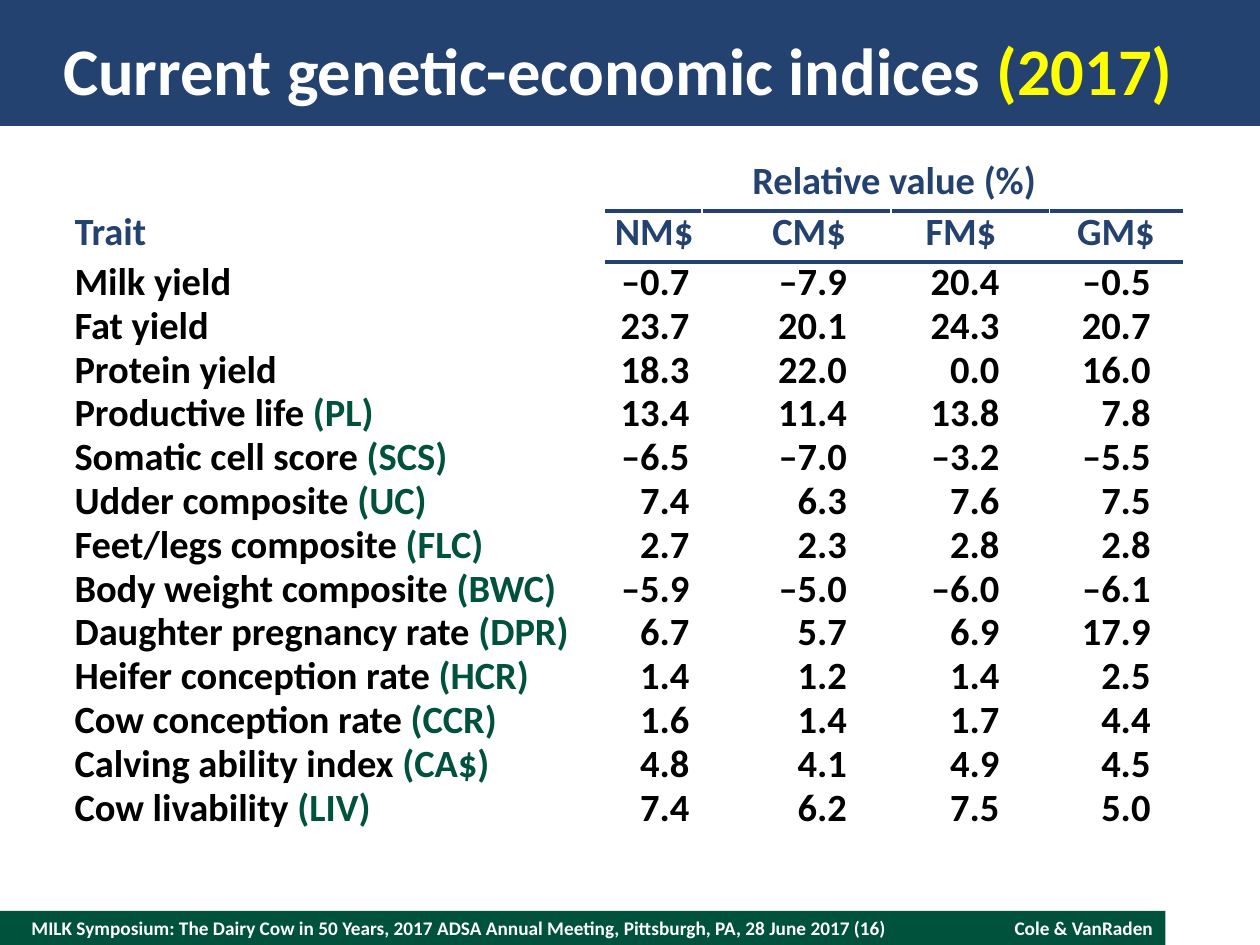
import pptx
import pptx.dml.color
import pptx.enum.shapes
import pptx.enum.text
import pptx.oxml
import pptx.oxml.ns
import pptx.util

Pt = pptx.util.Pt
RGB = pptx.dml.color.RGBColor.from_string
ALIGN = pptx.enum.text.PP_ALIGN
ANCHOR = pptx.enum.text.MSO_ANCHOR


class Theme:
    font = "Calibri"
    navy, green, yellow = RGB("244270"), RGB("00523C"), RGB("FFFF00")
    white, black = RGB("FFFFFF"), RGB("000000")
    title_size, table_size, footer_size = Pt(38), Pt(22), Pt(11)


def style(p, size, color, align=ALIGN.LEFT, spacing=None):
    p.alignment = align
    if spacing:
        p.line_spacing = Pt(spacing)
    p.font.name, p.font.size, p.font.bold = Theme.font, size, True
    p.font.color.rgb = color


def set_margins(box, left, top, right, bottom):
    box.margin_left, box.margin_top = Pt(left), Pt(top)
    box.margin_right, box.margin_bottom = Pt(right), Pt(bottom)


prs = pptx.Presentation()
prs.slide_width, prs.slide_height = Pt(720), Pt(540)
s = prs.slides.add_slide(prs.slide_layouts[5])

# Footer and title bars
for top, width, height, color in [(520.5, 666, 19.5, Theme.green), (0, 720, 72, Theme.navy)]:
    bar = s.shapes.add_shape(pptx.enum.shapes.MSO_SHAPE.RECTANGLE, 0, Pt(top), Pt(width), Pt(height))
    bar.shadow.inherit = False
    bar.fill.solid()
    bar.fill.fore_color.rgb = color
    bar.line.fill.background()

# Footer text
footers = [
    (18, 504, 0, ALIGN.LEFT,
     "MILK Symposium: The Dairy Cow in 50 Years, 2017 ADSA Annual Meeting, Pittsburgh, PA, 28 June 2017 (16)"),
    (522, 144, 7.2, ALIGN.RIGHT, "Cole & VanRaden"),
]
for left, width, side, align, text in footers:
    tf = s.shapes.add_textbox(Pt(left), Pt(520.5), Pt(width), Pt(19.5)).text_frame
    tf.word_wrap = True
    tf.vertical_anchor = ANCHOR.MIDDLE
    set_margins(tf, side, 0, side, 0)
    p = tf.paragraphs[0]
    p.text = text
    style(p, Theme.footer_size, Theme.white, align)

# Title, stacked above its bar
title = s.shapes.title
bar.element.addnext(title.element)
title.left, title.top, title.width, title.height = Pt(36), Pt(14.4), Pt(648), Pt(50.4)
tf = title.text_frame
tf.auto_size = pptx.enum.text.MSO_AUTO_SIZE.NONE
tf.vertical_anchor = ANCHOR.MIDDLE
set_margins(tf, 0, 0, 0, 0)
p = tf.paragraphs[0]
style(p, Theme.title_size, Theme.white)
p.add_run().text = "Current genetic-economic indices "
r = p.add_run()
r.text = "(2017)"
r.font.color.rgb = Theme.yellow

# Table: trait, abbreviation, values by index
indices = ["NM$", "CM$", "FM$", "GM$"]
traits = [
    ("Milk yield", "", "–0.7", "–7.9", "20.4", "–0.5"),
    ("Fat yield", "", "23.7", "20.1", "24.3", "20.7"),
    ("Protein yield", "", "18.3", "22.0", "0.0", "16.0"),
    ("Productive life", "PL", "13.4", "11.4", "13.8", "7.8"),
    ("Somatic cell score", "SCS", "–6.5", "–7.0", "–3.2", "–5.5"),
    ("Udder composite", "UC", "7.4", "6.3", "7.6", "7.5"),
    ("Feet/legs composite", "FLC", "2.7", "2.3", "2.8", "2.8"),
    ("Body weight composite", "BWC", "–5.9", "–5.0", "–6.0", "–6.1"),
    ("Daughter pregnancy rate", "DPR", "6.7", "5.7", "6.9", "17.9"),
    ("Heifer conception rate", "HCR", "1.4", "1.2", "1.4", "2.5"),
    ("Cow conception rate", "CCR", "1.6", "1.4", "1.7", "4.4"),
    ("Calving ability index", "CA$", "4.8", "4.1", "4.9", "4.5"),
    ("Cow livability", "LIV", "7.4", "6.2", "7.5", "5.0"),
]
widths = [303.84, 54.72, 108, 90.72, 75.6]
heights = [27.6, 29.2] + [25] * len(traits)
header_sides = [(0, 0), (14.4, 0), (0, 10.8), (0, 0)]
value_sides = [(0, 7.2), (7.2, 25.2), (0, 28.8), (0, 18)]

table = s.shapes.add_table(len(heights), len(widths), Pt(42.6), Pt(92.9),
                           Pt(sum(widths)), Pt(sum(heights))).table
table.first_row = table.horz_banding = False
for column, width in zip(table.columns, widths):
    column.width = Pt(width)
for row, height in zip(table.rows, heights):
    row.height = Pt(height)
for cell in table.iter_cells():
    cell.fill.background()
    set_margins(cell, 0, 0, 0, 0)
table.cell(0, 0).merge(table.cell(1, 0))
table.cell(0, 1).merge(table.cell(0, 4))

headers = [(0, 0, "Trait", ALIGN.LEFT, 24, (0, 0, 0, 3.6)),
           (0, 1, "Relative value (%)", ALIGN.CENTER, 24, (0, 0, 0, 3.6))]
for i, (name, (left, right)) in enumerate(zip(indices, header_sides), 1):
    headers.append((1, i, name, ALIGN.CENTER, 22, (left, 3.6, right, 3.6)))
for row, col, text, align, spacing, margins in headers:
    cell = table.cell(row, col)
    cell.vertical_anchor = ANCHOR.BOTTOM
    set_margins(cell, *margins)
    p = cell.text_frame.paragraphs[0]
    p.text = text
    style(p, Theme.table_size, Theme.navy, align, spacing)

# Rule between the spanning header and the index names
for row, edge in [(0, "lnB"), (1, "lnT")]:
    for col in range(1, 5):
        line = pptx.oxml.parse_xml(
            f'<a:{edge} {pptx.oxml.ns.nsdecls("a")} w="{Pt(2.25)}"><a:solidFill>'
            f'<a:srgbClr val="{Theme.navy}"/></a:solidFill></a:{edge}>')
        table.cell(row, col).fill._xPr.insert(0, line)

for row, (trait, abbreviation, *values) in enumerate(traits, 2):
    p = table.cell(row, 0).text_frame.paragraphs[0]
    style(p, Theme.table_size, Theme.black, spacing=25)
    p.add_run().text = trait
    if abbreviation:
        r = p.add_run()
        r.text = f" ({abbreviation})"
        r.font.color.rgb = Theme.green
    for col, (value, (left, right)) in enumerate(zip(values, value_sides), 1):
        cell = table.cell(row, col)
        set_margins(cell, left, 0, right, 0)
        p = cell.text_frame.paragraphs[0]
        p.text = value
        style(p, Theme.table_size, Theme.black, ALIGN.RIGHT, 25)

prs.save("out.pptx")
